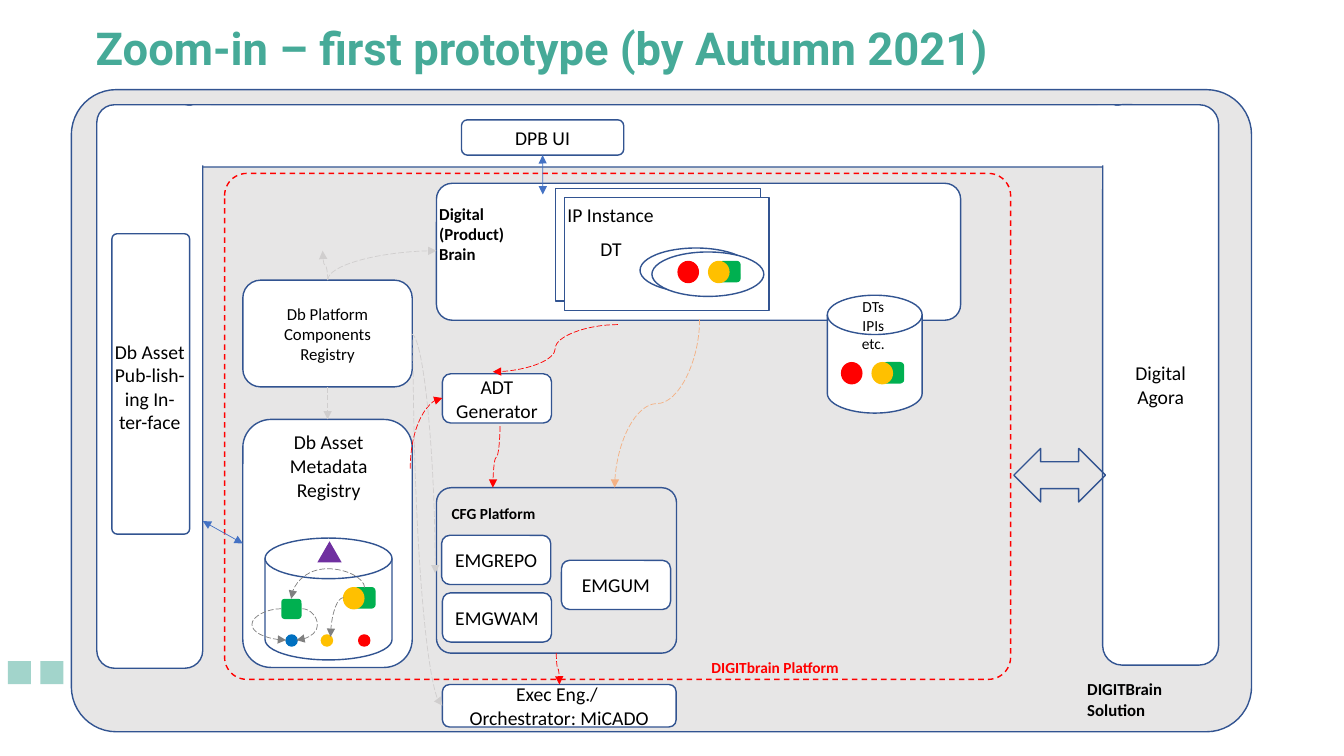
import pptx
import pptx.util
import pptx.dml.color
import pptx.enum.dml
import pptx.enum.shapes
import pptx.enum.text
import pptx.oxml
import pptx.oxml.ns

THEME = {
    "teal": "46AA98", "navy": "325491", "gray": "E7E6E6", "white": "FFFFFF",
    "red": "FF0000", "amber": "FFC000", "green": "00B050", "blue": "0070C0",
    "purple": "7030A0", "black": "000000", "link": "4472C4", "pale": "D0CECE",
    "dim": "808080", "peach": "F4B183",
    "body": "Calibri", "head": "Roboto",
    "title": 32.4, "large": 14, "mid": 12, "small": 11, "edge": 1, "thin": 0.5,
}

SQUARES = [(0.2, 16.66), (1.02, 16.66)]
SMALL = (2.75, 1.24)
PATCH = (0.64, 1.5)
SHEET = (5.16, 2.84)
OVAL = (2.82, 1.12)

PARTS = [
    ("solution", "round", (1.8, 2.26, 29.74, 16.18), {"fill": "gray", "adj": 0.07}),
    ("bar", "round", (3.76, 2.64, 26.49, 1.57), {"adj": 0.067}),
    ("asset", "round", (2.44, 2.64, 2.67, 14.2), {"text": "Db Asset Pub-lish-ing In-ter-face"}),
    ("left patch", "rect", (4.67, 2.67, *PATCH), {"line": None}),
    ("brain", "round", (11, 4.62, 13.21, 3.45), {"adj": 0.115}),
    ("platform", "round", (5.66, 4.37, 19.81, 12.75),
     {"fill": None, "line": "red", "dash": True, "adj": 0.044}),
    ("agora", "round", (27.79, 2.64, 2.92, 14.12), {"text": "Digital Agora"}),
    ("right patch", "rect", (27.66, 2.67, *PATCH), {"line": None}),
    ("assets", "round", (6.12, 10.57, 4.27, 6.25), {}),
    ("components", "round", (6.12, 7.06, 4.27, 2.69),
     {"text": "Db Platform Components Registry", "size": "mid"}),
    ("swap", "arrow", (25.55, 11.3, 2.31, 1.35), {"fill": None}),
    ("twin store", "disk", (20.85, 7.44, 2.39, 2.97), {}),
    ("asset store", "disk", (6.68, 13.56, 3.2, 3.07), {"fill": None}),
    ("ui", "round", (11.63, 3.02, 4.09, 0.89), {"text": "DPB UI"}),
    ("blue dot", "oval", (7.21, 16, 0.28, 0.28), {"fill": "blue", "line": "blue"}),
    ("amber dot", "oval", (8.1, 16, 0.28, 0.28), {"fill": "amber", "line": "amber"}),
    ("red dot", "oval", (9.04, 16, 0.28, 0.28), {"fill": "red", "line": "red"}),
    ("green block", "round", (7.09, 15.09, 0.51, 0.51), {"fill": "green", "line": None}),
    ("peak", "peak", (8, 13.64, 0.61, 0.53), {"fill": "purple", "line": None}),
    ("back sheet", "rect", (14, 4.75, *SHEET), {"fill": None}),
    ("front sheet", "rect", (14.22, 4.98, *SHEET), {}),
    ("back oval", "oval", (16.13, 6.25, *OVAL), {"fill": None}),
    ("front oval", "oval", (16.43, 6.35, *OVAL), {}),
    ("exec", "round", (11.15, 17.25, 5.89, 1.07), {"text": "Exec Eng./ \nOrchestrator: MiCADO"}),
    ("inner", "round", (2.82, 5.89, 1.96, 7.57), {"fill": None, "adj": 0.067}),
    ("emgum", "round", (14.15, 14.12, *SMALL), {"text": "EMGUM"}),
    ("emgwam", "round", (11.15, 14.94, *SMALL), {"text": "EMGWAM"}),
    ("adt", "round", (11.15, 9.42, *SMALL), {"text": "ADT Generator"}),
    ("emgrepo", "round", (11.13, 13.49, *SMALL), {"text": "EMGREPO"}),
    ("cfg", "round", (11, 12.29, 6.05, 4.17), {"fill": None, "adj": 0.089}),
]

PAIRS = [(8.66, 14.81), (17.86, 6.59), (21.98, 9.14)]
REDS = [(17.09, 6.59), (21.21, 9.14)]

CURVES = [
    ((8.26, 9.75), (8.26, 10.57), "pale", 270, "h", 0.5),
    ((8.26, 7.06), (8.13, 6.32), "pale", 270, "v", 0.5),
    ((10.41, 8.56), (11.15, 17.78), "pale", 270, "h", None),
    ((8.26, 7.06), (11, 6.32), "pale", 90, "hv", None),
    ((7.09, 15.34), (7.21, 16.13), "dim", 180, "hv", -6.17),
    ((7.62, 15.34), (7.47, 16.13), "dim", 0, "h", -2.53),
    ((9.19, 14.81), (7.34, 15.09), "dim", 270, "hv", -1.71),
    ((8.66, 15.06), (8.33, 16.05), "dim", 180, "v", None),
    ((15.57, 8.18), (12.42, 9.37), "red", 180, "v", 0.5),
    ((10.34, 11.81), (11.15, 10.03), "red", 90, "hv", None),
    ((14.02, 16.46), (14.1, 17.25), "red", 270, "h", 0.5),
    ((12.6, 10.74), (12.42, 12.29), "red", 90, "", 0.5),
    ((17.63, 8.05), (15.49, 12.29), "peach", 90, "", 0.5),
    ((10.36, 8.41), (10.97, 14.45), "pale", 0, "", None),
]

LABELS = [
    ("Zoom-in – first prototype (by Autumn 2021)", (2.16, 0.71, 29.21, 1.14),
     {"size": "title", "face": "head", "color": "teal", "bold": True, "mid": True, "space": 0.9}),
    ("DIGITbrain Platform", (17.68, 16.46, 7.09, 1.07),
     {"size": "small", "color": "red", "bold": True}),
    ("Digital\n(Product) \nBrain", (10.82, 5, 3.3, 2.67), {"size": "mid", "bold": True}),
    ("DIGITBrain \nSolution", (27.15, 16.99, 2.54, 1.27), {"size": "mid", "bold": True}),
    ("Db Asset Metadata Registry", (6.43, 10.72, 3.71, 3.05), {"center": True}),
    ("IP Instance", (14.05, 4.98, 6.07, 1.27), {}),
    ("DT", (14.88, 5.84, 1.55, 1.27), {}),
    (("DTs", "IPIs", "etc."), (21.11, 7.37, 1.8, 1.68), {"size": "small", "center": True}),
    ("CFG Platform", (11.13, 12.57, 7.09, 0.74), {"size": "small", "bold": True}),
]

KIND = pptx.enum.shapes.MSO_SHAPE
FORMS = {"round": KIND.ROUNDED_RECTANGLE, "rect": KIND.RECTANGLE, "oval": KIND.OVAL,
         "disk": KIND.FLOWCHART_MAGNETIC_DISK, "arrow": KIND.LEFT_RIGHT_ARROW,
         "peak": KIND.ISOSCELES_TRIANGLE}
DASH = pptx.enum.dml.MSO_LINE
ALIGN = pptx.enum.text.PP_ALIGN
ANCHOR = pptx.enum.text.MSO_ANCHOR
LINK = pptx.enum.shapes.MSO_CONNECTOR
cm = pptx.util.Cm
qn = pptx.oxml.ns.qn


def rgb(name):
    return pptx.dml.color.RGBColor.from_string(THEME[name])


def write(frame, text, size="large", face="body", color="black", bold=False,
          center=False, mid=False, space=None):
    frame.word_wrap = True
    frame.vertical_anchor = ANCHOR.MIDDLE if mid else ANCHOR.TOP
    rows = (text,) if isinstance(text, str) else text
    for i, row in enumerate(rows):
        para = frame.add_paragraph() if i else frame.paragraphs[0]
        para.text = row.replace("\n", "\v")
        para.alignment = ALIGN.CENTER if center else ALIGN.LEFT
        if space:
            para.line_spacing = space
        for run in para.runs:
            run.font.size = pptx.util.Pt(THEME[size])
            run.font.name = THEME[face]
            run.font.bold = bold
            run.font.color.rgb = rgb(color)


def draw(slide, form, box, fill="white", line="navy", dash=False, adj=None,
         text=None, size="large"):
    part = slide.shapes.add_shape(FORMS[form], *map(cm, box))
    part.shadow.inherit = False
    if fill:
        part.fill.solid()
        part.fill.fore_color.rgb = rgb(fill)
    else:
        part.fill.background()
    if line:
        part.line.color.rgb = rgb(line)
        part.line.width = pptx.util.Pt(THEME["edge"])
        if dash:
            part.line.dash_style = DASH.DASH
    else:
        part.line.fill.background()
    if adj is not None:
        part.adjustments[0] = adj
    if text:
        write(part.text_frame, text, size=size, center=True, mid=True)
    return part


def link(slide, kind, start, end, color, tips):
    wire = slide.shapes.add_connector(kind, *map(cm, (*start, *end)))
    wire.line.color.rgb = rgb(color)
    wire.line.width = pptx.util.Pt(THEME["thin"])
    if kind == LINK.CURVE:
        wire.line.dash_style = DASH.LONG_DASH
    props = wire.element.spPr
    for tip in tips:
        pptx.oxml.ns.qn(tip)
        mark = props.find(qn("a:ln")).makeelement(qn(tip), {"type": "triangle"})
        props.find(qn("a:ln")).append(mark)
    props.append(props.makeelement(qn("a:effectLst"), {}))
    return wire


def bend(slide, start, end, color, turn, flip, adj):
    wire = link(slide, LINK.CURVE, start, end, color, ["a:tailEnd"])
    wide, high = abs(end[0] - start[0]), abs(end[1] - start[1])
    if turn in (90, 270):
        wide, high = high, wide
    wire.left = cm((start[0] + end[0] - wide) / 2)
    wire.top = cm((start[1] + end[1] - high) / 2)
    wire.width, wire.height = cm(wide), cm(high)
    frame = wire.element.spPr.find(qn("a:xfrm"))
    frame.set("rot", str(turn * 60000))
    frame.set("flipH", str(int("h" in flip)))
    frame.set("flipV", str(int("v" in flip)))
    geom = wire.element.spPr.find(qn("a:prstGeom"))
    if adj is None:
        geom.set("prst", "curvedConnector2")
    else:
        guide = geom.makeelement(qn("a:gd"), {"name": "adj1", "fmla": f"val {round(adj * 100000)}"})
        geom.find(qn("a:avLst")).append(guide)


def main():
    deck = pptx.Presentation()
    deck.slide_width, deck.slide_height = cm(33.87), cm(19.05)
    slide = deck.slides.add_slide(deck.slide_layouts[6])

    for x, y in SQUARES:
        tile = draw(slide, "rect", (x, y, 0.58, 0.58), fill="teal", line=None)
        tint = tile.element.spPr.find(qn("a:solidFill"))[0]
        tint.append(tint.makeelement(qn("a:alpha"), {"val": "50000"}))

    parts = {name: draw(slide, form, box, **look) for name, form, box, look in PARTS}
    for x, y in PAIRS:
        draw(slide, "round", (x + 0.28, y, 0.51, 0.51), fill="green", line="green")
        draw(slide, "oval", (x, y, 0.51, 0.53), fill="amber", line="amber")
    for x, y in REDS:
        draw(slide, "oval", (x, y, 0.51, 0.53), fill="red", line="red")

    for curve in CURVES:
        bend(slide, *curve)
    both = ["a:headEnd", "a:tailEnd"]
    wire = link(slide, LINK.STRAIGHT, (5.11, 13.13), (6.12, 13.7), "link", both)
    wire.end_connect(parts["assets"], 1)
    wire = link(slide, LINK.STRAIGHT, (13.68, 3.91), (13.68, 4.9), "link", both)
    wire.begin_connect(parts["ui"], 2)

    for text, box, look in LABELS:
        label = slide.shapes.add_textbox(*map(cm, box))
        write(label.text_frame, text, **look)
    deck.save("out.pptx")


if __name__ == "__main__":
    main()
